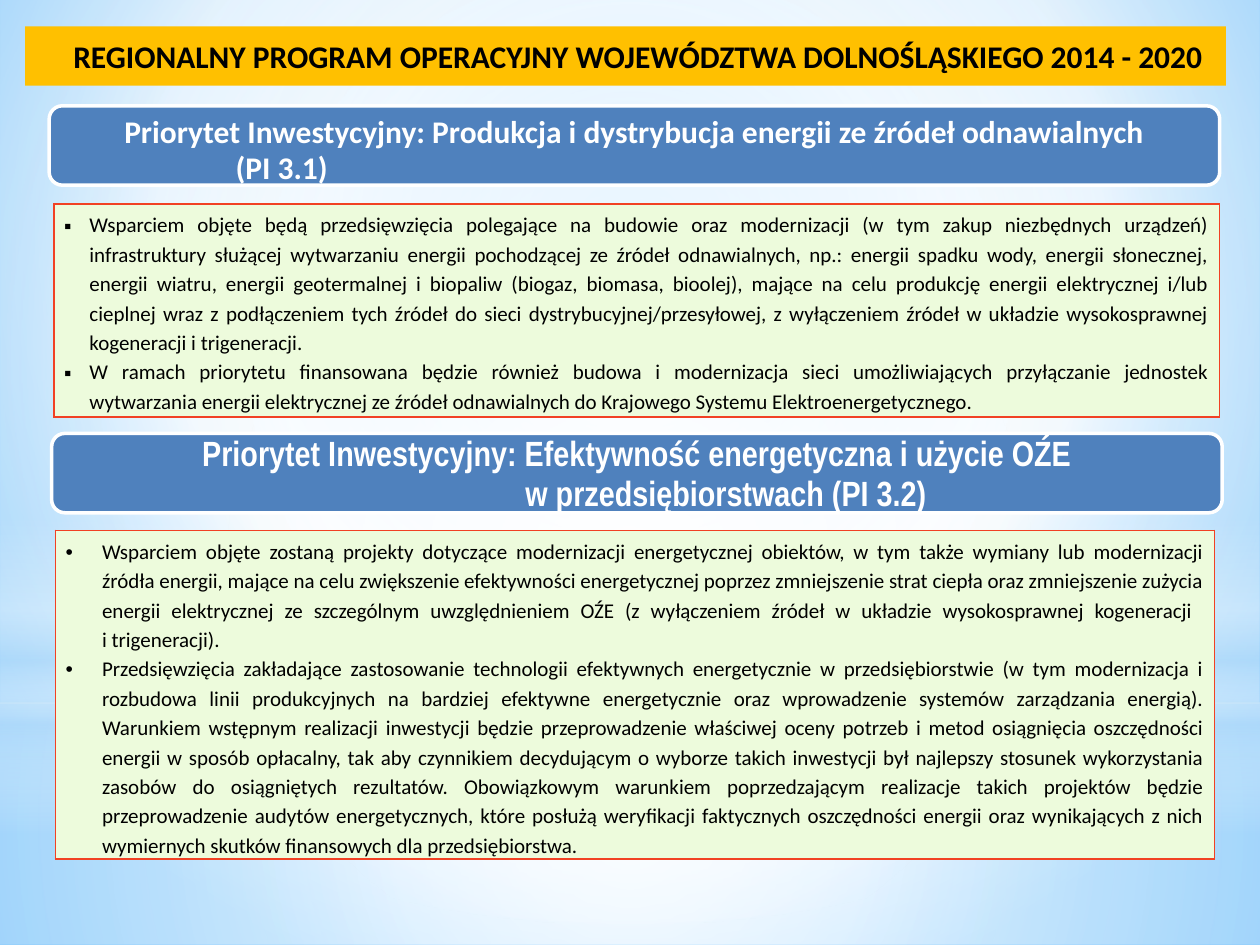
from lxml.etree import SubElement
from pptx import Presentation
from pptx.dml.color import RGBColor
from pptx.enum.shapes import MSO_SHAPE as Shape
from pptx.enum.text import MSO_ANCHOR as Anchor, PP_ALIGN as Align
from pptx.oxml.ns import qn
from pptx.util import Inches, Pt

TITLE = "REGIONALNY PROGRAM OPERACYJNY WOJEWÓDZTWA DOLNOŚLĄSKIEGO 2014 - 2020"
BLACK, WHITE, ORANGE, BLUE = "000000", "FFFFFF", "FFC000", "4F81BD"
GREEN, RED, SKY = "EDFBDC", "F14124", "B4DCFA"
CENTRE = (50, 50, 50, 50)

# Gradient stops: position, colour, opacity (all in percent)
BACKGROUND = [(0, "9ED5FF", 100), (60, WHITE, 100), (100, "5BB9FF", 100)]
BACKDROPS = [  # preset, top, height, stops, focus (None: linear, downwards)
    (Shape.RECTANGLE, 5.58, 1.92,
     [(0, WHITE, 91), (37, WHITE, 76), (100, SKY, 79)], CENTRE),
    (Shape.RECTANGLE, 0, 5.58,
     [(0, WHITE, 89), (48, WHITE, 62), (100, SKY, 79)], CENTRE),
    (Shape.RECTANGLE, 4.12, 2.5,
     [(0, WHITE, 0), (29, WHITE, 30), (45, SKY, 40), (55, WHITE, 26),
      (65, SKY, 60), (100, WHITE, 0)], None),
    (Shape.OVAL, 1.75, 5.58, [(0, WHITE, 100), (56, WHITE, 0)], CENTRE),
]

SECTIONS = [
    {
        "banner": (0.39, 0.84), "label": (0.41, 0.92, 9.25, 0.55),
        "heading": ["Priorytet Inwestycyjny: Produkcja i dystrybucja energii ze źródeł odnawialnych",
                    "(PI 3.1)"],
        "second_line_indent": 1.2, "font": "Calibri", "size": 18,
        "table": (0.43, 1.62, 9.25, 1.65), "bullet": "▪", "hanging": 0.2,
        "points": [
            "Wsparciem objęte będą przedsięwzięcia polegające na budowie oraz modernizacji (w tym zakup niezbędnych urządzeń) infrastruktury służącej wytwarzaniu energii pochodzącej ze źródeł odnawialnych, np.: energii spadku wody, energii słonecznej, energii wiatru, energii geotermalnej i biopaliw (biogaz, biomasa, bioolej), mające na celu produkcję energii elektrycznej i/lub cieplnej wraz z podłączeniem tych źródeł do sieci dystrybucyjnej/przesyłowej, z wyłączeniem źródeł w układzie wysokosprawnej kogeneracji i trigeneracji.",
            "W ramach priorytetu finansowana będzie również budowa i modernizacja sieci umożliwiających przyłączanie jednostek wytwarzania energii elektrycznej ze źródeł odnawialnych do Krajowego Systemu Elektroenergetycznego.",
        ],
    },
    {
        "banner": (0.41, 3.44), "label": (0.43, 3.47, 9.25, 0.6),
        "heading": ["Priorytet Inwestycyjny: Efektywność energetyczna i użycie OŹE",
                    "w przedsiębiorstwach (PI 3.2)"],
        "second_line_indent": 3.48, "font": "Arial Narrow", "size": 20,
        "table": (0.44, 4.21, 9.2, 2.6), "bullet": "•", "hanging": 0.29,
        "points": [
            "Wsparciem objęte zostaną projekty dotyczące modernizacji energetycznej obiektów, w tym także wymiany lub modernizacji źródła energii, mające na celu zwiększenie efektywności energetycznej poprzez zmniejszenie strat ciepła oraz zmniejszenie zużycia energii elektrycznej ze szczególnym uwzględnieniem OŹE (z wyłączeniem źródeł w układzie wysokosprawnej kogeneracji \vi trigeneracji).",
            "Przedsięwzięcia zakładające zastosowanie technologii efektywnych energetycznie w przedsiębiorstwie (w tym modernizacja i rozbudowa linii produkcyjnych na bardziej efektywne energetycznie oraz wprowadzenie systemów zarządzania energią). Warunkiem wstępnym realizacji inwestycji będzie przeprowadzenie właściwej oceny potrzeb i metod osiągnięcia oszczędności energii w sposób opłacalny, tak aby czynnikiem decydującym o wyborze takich inwestycji był najlepszy stosunek wykorzystania zasobów do osiągniętych rezultatów. Obowiązkowym warunkiem poprzedzającym realizacje takich projektów będzie przeprowadzenie audytów energetycznych, które posłużą weryfikacji faktycznych oszczędności energii oraz wynikających z nich wymiernych skutków finansowych dla przedsiębiorstwa.",
        ],
    },
]


def paint(fill, colour):
    fill.solid()
    fill.fore_color.rgb = RGBColor.from_string(colour)


def add(parent, tag, **attributes):
    return SubElement(parent, qn(tag), {k: str(v) for k, v in attributes.items()})


def paint_gradient(fill, properties, stops, focus):
    """Fill with a gradient that is circular around focus, or linear without one."""
    fill.gradient()
    gradient = properties.find(qn("a:gradFill"))
    for child in list(gradient):
        gradient.remove(child)
    stop_list = add(gradient, "a:gsLst")
    for position, colour, opacity in stops:
        stop = add(stop_list, "a:gs", pos=position * 1000)
        add(add(stop, "a:srgbClr", val=colour), "a:alpha", val=opacity * 1000)
    if focus:
        sides = {side: value * 1000 for side, value in zip("ltrb", focus)}
        add(add(gradient, "a:path", path="circle"), "a:fillToRect", **sides)
    else:
        add(gradient, "a:lin", ang=90 * 60000, scaled=1)


def style_runs(paragraph, font_name, size, colour, bold=False):
    for line_break in paragraph._p.findall(qn("a:br")):
        add(line_break, "a:rPr", sz=size * 100)
    for run in paragraph.runs:
        run.font.name, run.font.size, run.font.bold = font_name, Pt(size), bold
        run.font.color.rgb = RGBColor.from_string(colour)


def indent(paragraph, left, first=0):
    properties = paragraph._p.get_or_add_pPr()
    properties.set("marL", str(Inches(left)))
    properties.set("indent", str(Inches(first)))
    return properties


def add_backdrops(slide):
    background = slide.background.fill
    paint_gradient(background, slide._element.cSld.find(qn("p:bg")).find(qn("p:bgPr")),
                   BACKGROUND, (20, 10, 20, 60))
    for preset, top, height, stops, focus in BACKDROPS:
        shape = slide.shapes.add_shape(preset, 0, Inches(top), Inches(10), Inches(height))
        shape.shadow.inherit = False
        shape.line.fill.background()
        paint_gradient(shape.fill, shape._element.spPr, stops, focus)


def add_title(slide):
    title = slide.shapes.title
    slide.shapes._spTree.append(title._element)  # in front of the backdrops
    title.left, title.top, title.width, title.height = map(Inches, (0.2, 0.21, 9.53, 0.47))
    paint(title.fill, ORANGE)
    title.text_frame.text = TITLE
    title.text_frame.vertical_anchor = Anchor.MIDDLE
    paragraph = title.text_frame.paragraphs[0]
    paragraph.alignment = Align.CENTER
    indent(paragraph, 0.2)
    style_runs(paragraph, "Calibri", 18, BLACK, bold=True)


def add_banner(slide, section):
    banner = slide.shapes.add_shape(Shape.ROUNDED_RECTANGLE, *map(Inches, section["banner"]),
                                    Inches(9.29), Inches(0.63))
    banner.shadow.inherit = False
    paint(banner.fill, BLUE)
    paint(banner.line.fill, WHITE)
    banner.line.width = Pt(2)

    frame = slide.shapes.add_textbox(*map(Inches, section["label"])).text_frame
    frame.word_wrap = True
    frame.vertical_anchor = Anchor.MIDDLE
    frame.margin_left = frame.margin_right = Inches(0.26)
    frame.margin_top = frame.margin_bottom = 0
    frame.text = "\n".join(section["heading"])
    first, second = frame.paragraphs
    first.alignment, second.alignment = Align.CENTER, Align.LEFT
    indent(second, section["second_line_indent"])
    for paragraph in frame.paragraphs:
        paragraph.line_spacing = 0.95
        style_runs(paragraph, section["font"], section["size"], WHITE, bold=True)


def add_points(slide, section):
    table = slide.shapes.add_table(1, 1, *map(Inches, section["table"])).table
    table.first_row = table.horz_banding = False
    cell = table.cell(0, 0)
    paint(cell.fill, GREEN)
    cell.margin_left = cell.margin_right = Inches(0.08)
    cell.margin_top = cell.margin_bottom = Inches(0.04)
    properties = cell._tc.get_or_add_tcPr()
    for index, side in enumerate(("a:lnL", "a:lnR", "a:lnT", "a:lnB")):
        border = add(properties, side, w=Pt(1))
        add(add(border, "a:solidFill"), "a:srgbClr", val=RED)
        properties.insert(index, border)

    frame = cell.text_frame
    for index, point in enumerate(section["points"]):
        paragraph = frame.add_paragraph() if index else frame.paragraphs[0]
        paragraph.text = point
        bullet = indent(paragraph, section["hanging"], -section["hanging"])
        add(bullet, "a:buFont", typeface="Arial")
        add(bullet, "a:buChar", char=section["bullet"])
        paragraph.alignment = Align.JUSTIFY
        paragraph.line_spacing = 1.15
        style_runs(paragraph, "Calibri", 12, BLACK)


def main():
    presentation = Presentation()
    presentation.slide_width, presentation.slide_height = Inches(10), Inches(7.5)
    slide = presentation.slides.add_slide(presentation.slide_layouts[5])
    add_backdrops(slide)
    add_title(slide)
    for section in SECTIONS:
        add_banner(slide, section)
        add_points(slide, section)
    presentation.save("out.pptx")


if __name__ == "__main__":
    main()
